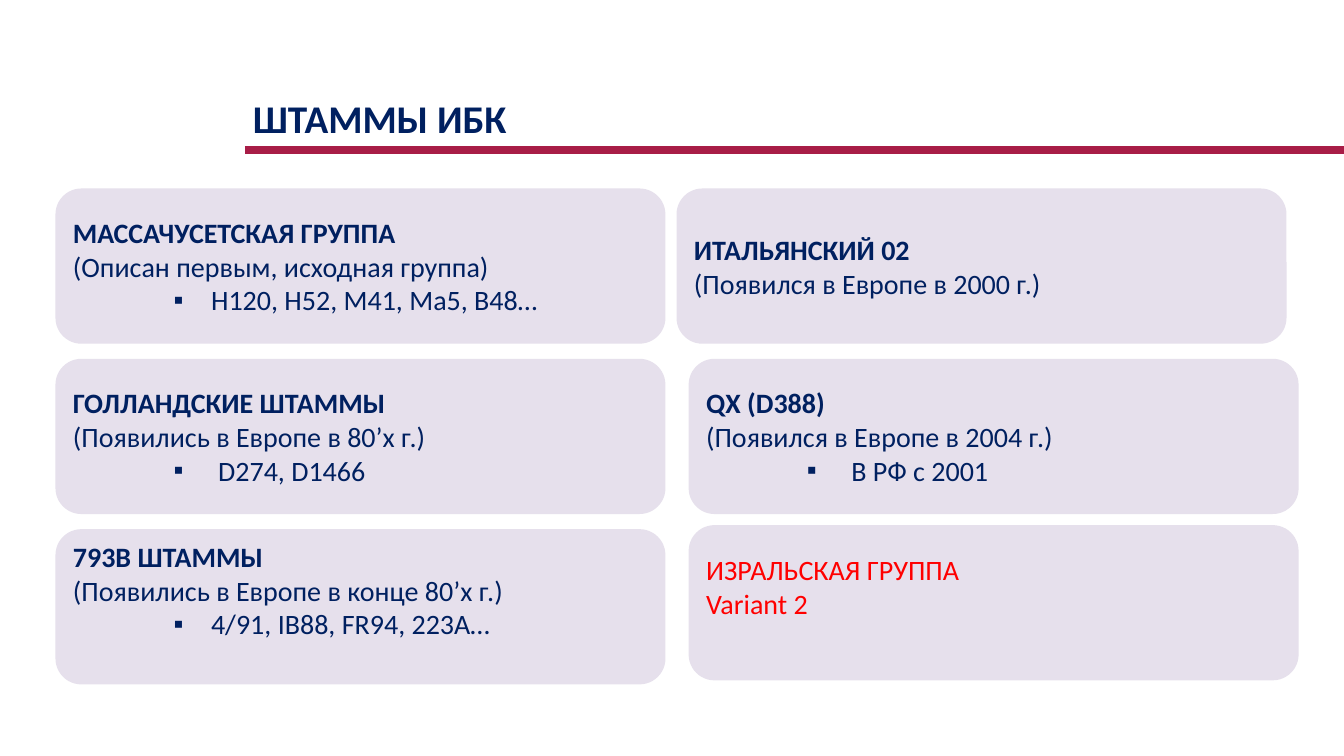
from lxml import etree
from pptx import Presentation
from pptx.dml.color import RGBColor
from pptx.enum.shapes import MSO_CONNECTOR as Connector, MSO_SHAPE as Shape
from pptx.enum.text import MSO_ANCHOR as Anchor, PP_ALIGN as Align
from pptx.oxml.ns import qn
from pptx.util import Inches, Pt

NAVY, RED, CRIMSON, LILAC = "002060", "FF0000", "A81D47", "E6E0EC"
CARD_WIDTH, CARD_HEIGHT = 6.05, 1.54
LEFT_COLUMN, RIGHT_COLUMN = 0.55, 6.83
FIRST_ROW, ROW_STEP = 1.87, 1.69
BULLET_START = 1
RAISED = 0.38  # bottom inset that lifts the text by half a line


def color(value):
    return RGBColor.from_string(value)


def add_span(para, text, size, bold=False, ink=NAVY):
    span = para.add_run()
    span.text = text
    span.font.name = "Calibri"
    span.font.size = Pt(size)
    span.font.bold = bold
    span.font.color.rgb = color(ink)


def add_bullet(para, hanging):
    props = para._p.get_or_add_pPr()
    props.set("marL", str(Inches(BULLET_START + hanging)))
    props.set("indent", str(-Inches(hanging)))
    etree.SubElement(props, qn("a:buFont")).set("typeface", "Arial")
    etree.SubElement(props, qn("a:buChar")).set("char", "▪")


def add_heading(page, left, top, width, height, text):
    # Title
    box = page.shapes.add_textbox(Inches(left), Inches(top), Inches(width), Inches(height))
    box.text_frame.word_wrap = False
    para = box.text_frame.paragraphs[0]
    para.alignment = Align.CENTER
    add_span(para, text, 28, bold=True)

    # Rule below the title, running to the slide's right edge
    rule_y = Inches(top + height + 0.03)
    rule = page.shapes.add_connector(
        Connector.STRAIGHT, Inches(left + 0.04), rule_y, Inches(13.33), rule_y)
    rule.line.color.rgb = color(CRIMSON)
    rule.line.width = Pt(6)
    etree.SubElement(rule._element.spPr, qn("a:effectLst"))


def add_card(page, left, top, name, detail, strains=None, hanging=0.37,
             ink=NAVY, bold=True, bottom_inset=0.05):
    card = page.shapes.add_shape(
        Shape.ROUNDED_RECTANGLE, Inches(left), Inches(top),
        Inches(CARD_WIDTH), Inches(CARD_HEIGHT))
    card.shadow.inherit = False
    card.fill.solid()
    card.fill.fore_color.rgb = color(LILAC)
    card.line.fill.background()

    frame = card.text_frame
    frame.word_wrap = True
    frame.vertical_anchor = Anchor.MIDDLE
    frame.margin_bottom = Inches(bottom_inset)

    # Strain group, then its history, then its members
    para = frame.paragraphs[0]
    para.alignment = Align.LEFT
    add_span(para, name, 20, bold, ink)
    para = frame.add_paragraph()
    para.alignment = Align.LEFT
    add_span(para, detail, 20, ink=ink)
    if strains:
        para = frame.add_paragraph()
        para.alignment = Align.LEFT
        add_bullet(para, hanging)
        add_span(para, strains, 20, ink=ink)


def build_slide(page):
    add_heading(page, 2.39, 0.89, 2.75, 0.57, "ШТАММЫ ИБК")
    rows = [FIRST_ROW + ROW_STEP * index for index in range(3)]

    # Left column
    add_card(page, LEFT_COLUMN, rows[0], "МАССАЧУСЕТСКАЯ ГРУППА",
             "(Описан первым, исходная группа)", "H120, H52, M41, Ма5, В48…")
    add_card(page, LEFT_COLUMN, rows[1], "ГОЛЛАНДСКИЕ ШТАММЫ",
             "(Появились в Европе в 80’х г.)", "D274, D1466", hanging=0.44)
    add_card(page, LEFT_COLUMN, rows[2], "793B ШТАММЫ",
             "(Появились в Европе в конце 80’х г.)", "4/91, IB88, FR94, 223А…",
             bottom_inset=RAISED)

    # Right column
    add_card(page, RIGHT_COLUMN - 0.12, rows[0], "ИТАЛЬЯНСКИЙ 02",
             "(Появился в Европе в 2000 г.)")
    add_card(page, RIGHT_COLUMN, rows[1], "QX (D388)",
             "(Появился в Европе в 2004 г.)", "В РФ с 2001", hanging=0.44)
    add_card(page, RIGHT_COLUMN, rows[2] - 0.04, "ИЗРАЛЬСКАЯ ГРУППА", "Variant 2",
             ink=RED, bold=False, bottom_inset=RAISED)


def main():
    deck = Presentation()
    deck.slide_width, deck.slide_height = Inches(13.33), Inches(7.5)
    build_slide(deck.slides.add_slide(deck.slide_layouts[6]))
    deck.save("out.pptx")


if __name__ == "__main__":
    main()
